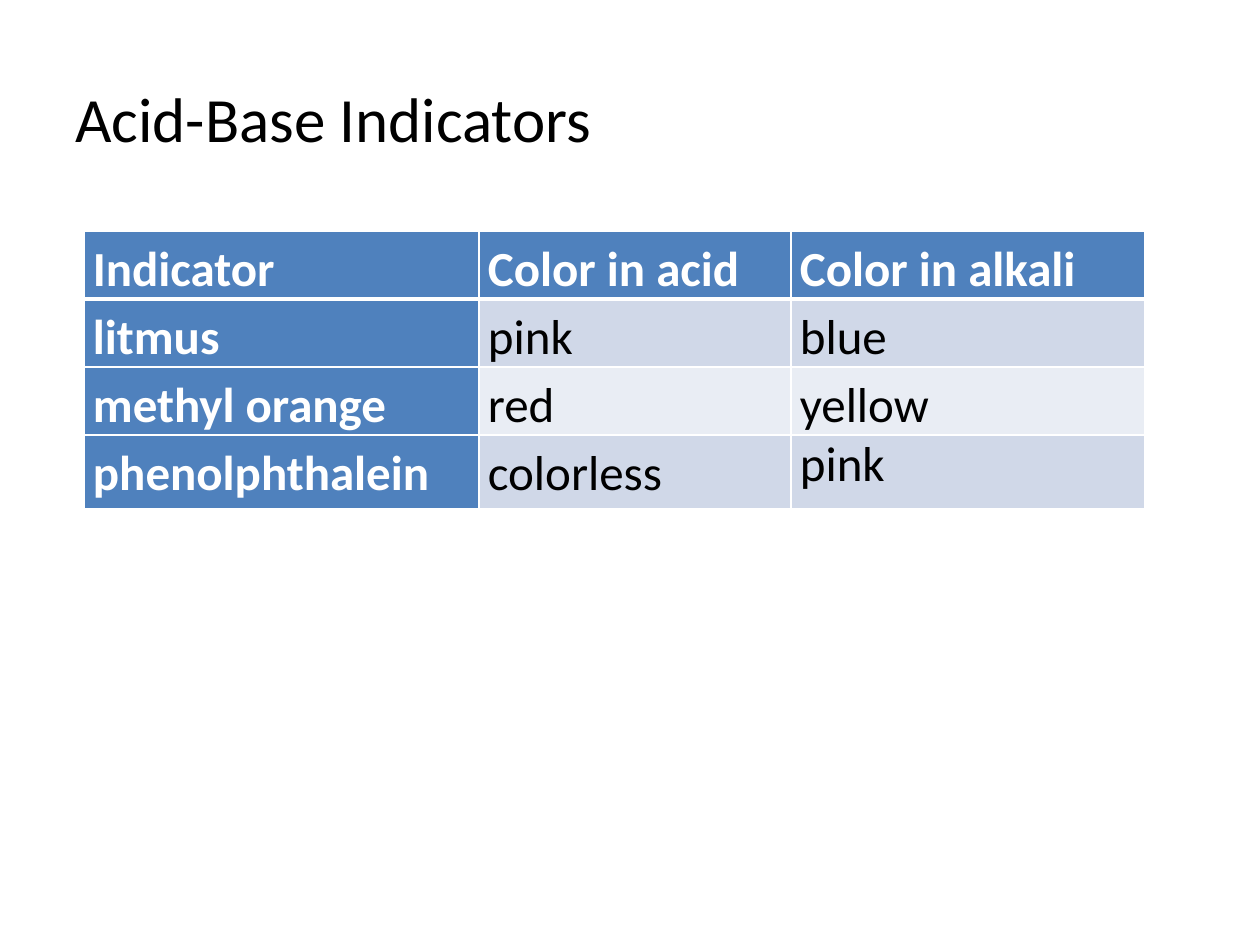
import dataclasses

import lxml.etree
import pptx
import pptx.dml.color
import pptx.enum.text
import pptx.oxml.ns
import pptx.util

EMU_PER_PX = 914400 // 126


@dataclasses.dataclass(frozen=True)
class Theme:
    font: str = "Calibri"
    title_size: int = 36
    table_size: int = 28
    dark: str = "000000"
    light: str = "FFFFFF"
    accent: str = "4F81BD"
    bands: tuple = ("D0D8E8", "E9EDF4")
    rule: int = 1
    header_rule: int = 3


def px(length):
    return pptx.util.Emu(length * EMU_PER_PX)


def rgb(value):
    return pptx.dml.color.RGBColor.from_string(value)


def apply_format(target, values):
    for name, value in values.items():
        setattr(target, name, value)


class SlideBuilder:
    def __init__(self, slide, theme):
        self.slide = slide
        self.theme = theme

    def add_text(self, frame, text, size, color, bold=False, line_spacing=1.0):
        paragraph = frame.paragraphs[0]
        paragraph.line_spacing = line_spacing
        run = paragraph.add_run()
        run.text = text
        apply_format(run.font, {
            "name": self.theme.font,
            "size": pptx.util.Pt(size),
            "bold": bold,
        })
        run.font.color.rgb = rgb(color)

    def title(self, text, left, top, width, height):
        shape = self.slide.shapes.add_textbox(px(left), px(top), px(width), px(height))
        apply_format(shape.text_frame, {
            "word_wrap": True,
            "vertical_anchor": pptx.enum.text.MSO_ANCHOR.MIDDLE,
        })
        self.add_text(shape.text_frame, text, self.theme.title_size, self.theme.dark)

    def border(self, cell, side, width):
        qn = pptx.oxml.ns.qn
        line = lxml.etree.SubElement(
            cell._tc.get_or_add_tcPr(), qn(f"a:ln{side}"), w=str(pptx.util.Pt(width)))
        fill = lxml.etree.SubElement(line, qn("a:solidFill"))
        lxml.etree.SubElement(fill, qn("a:srgbClr"), val=self.theme.light)

    def cell(self, cell, text, row, column, line_spacing):
        theme = self.theme
        heading = row == 0 or column == 0
        apply_format(cell, {
            "margin_left": px(9),
            "margin_right": px(9),
            "margin_top": 0,
            "margin_bottom": 0,
        })
        # The rule under the header row is shared by the cells on both sides of it.
        widths = {
            "L": theme.rule,
            "R": theme.rule,
            "T": theme.header_rule if row == 1 else theme.rule,
            "B": theme.header_rule if row == 0 else theme.rule,
        }
        for side, width in widths.items():
            self.border(cell, side, width)
        cell.fill.solid()
        band = theme.bands[(row - 1) % len(theme.bands)]
        cell.fill.fore_color.rgb = rgb(theme.accent if heading else band)
        self.add_text(cell.text_frame, text, theme.table_size,
                      theme.light if heading else theme.dark, heading, line_spacing)

    def table(self, rows, left, top, widths, heights):
        table = self.slide.shapes.add_table(
            len(rows), len(widths), px(left), px(top),
            px(sum(widths)), px(sum(heights))).table
        apply_format(table, {"first_row": True, "first_col": True, "horz_banding": True})
        for column, width in zip(table.columns, widths):
            column.width = px(width)
        for row, height in zip(table.rows, heights):
            row.height = px(height)
        last = (len(rows) - 1, len(widths) - 1)
        for row, texts in enumerate(rows):
            for column, text in enumerate(texts):
                line_spacing = 1.0 if (row, column) == last else 1.15
                self.cell(table.cell(row, column), text, row, column, line_spacing)


def main():
    presentation = pptx.Presentation()
    apply_format(presentation, {"slide_width": px(1260), "slide_height": px(945)})
    slide = presentation.slides.add_slide(presentation.slide_layouts[6])
    builder = SlideBuilder(slide, Theme())
    builder.title("Acid-Base Indicators", 63, 38, 1134, 158)
    indicators = [
        ("Indicator", "Color in acid", "Color in alkali"),
        ("litmus", "pink", "blue"),
        ("methyl orange", "red", "yellow"),
        ("phenolphthalein", "colorless", "pink"),
    ]
    builder.table(indicators, 84, 231, widths=(395, 312, 354), heights=(68, 68, 68, 74))
    presentation.save("out.pptx")


if __name__ == "__main__":
    main()
